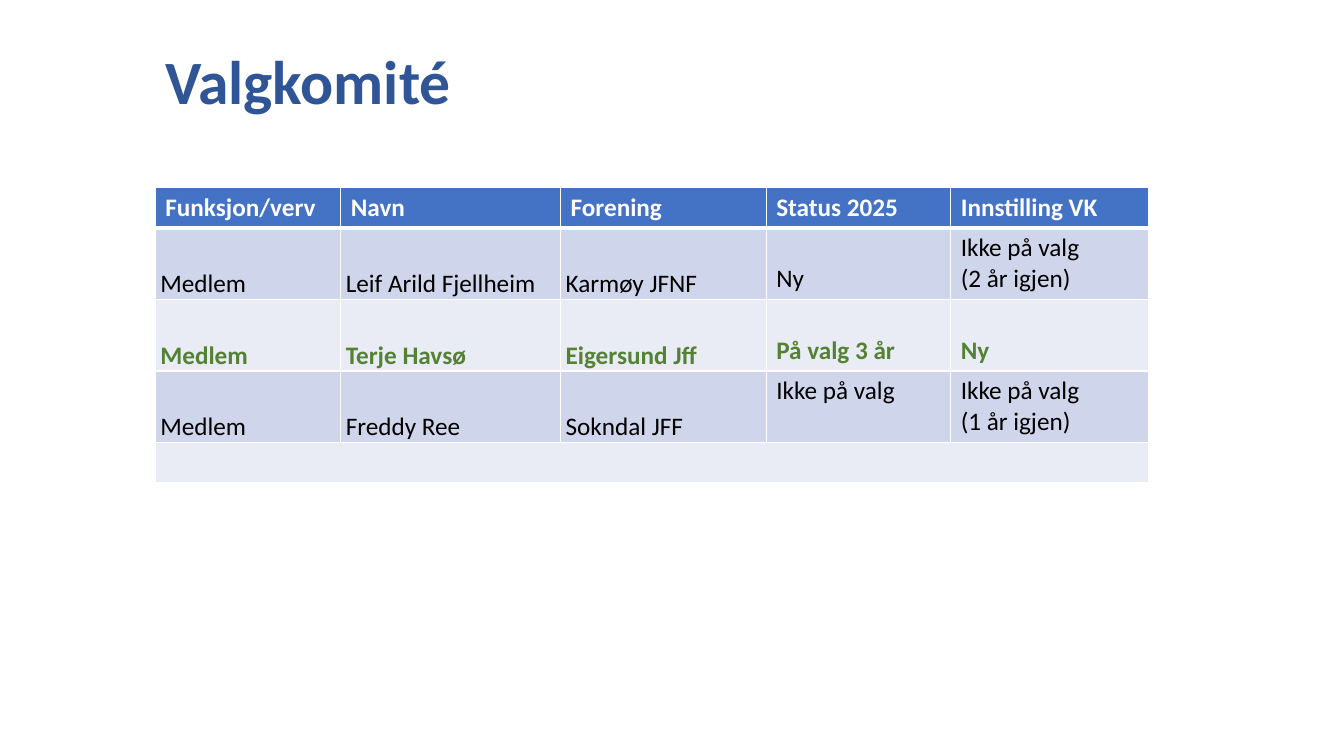
from lxml.etree import SubElement
from pptx import Presentation
from pptx.dml.color import RGBColor
from pptx.enum.text import MSO_ANCHOR
from pptx.oxml.ns import qn
from pptx.util import Inches, Pt

COLORS = {
    "title": "2F5597",
    "header": "4472C4",
    "odd": "CFD5EA",
    "even": "E9EBF5",
    "white": "FFFFFF",
    "black": "000000",
    "green": "548235",
}
COLUMN_WIDTHS = [1.84, 2.18, 2.04, 1.83, 1.96]
ROW_HEIGHTS = [0.4, 0.71, 0.71, 0.71, 0.4]
HEADINGS = ["Funksjon/verv", "Navn", "Forening", "Status 2025", "Innstilling VK"]
MEMBERS = [
    ["Medlem", "Leif Arild Fjellheim", "Karmøy JFNF", "Ny", "Ikke på valg\n(2 år igjen)"],
    ["Medlem", "Terje Havsø", "Eigersund Jff", "På valg 3 år", "Ny"],
    ["Medlem", "Freddy Ree", "Sokndal JFF", "Ikke på valg", "Ikke på valg\n(1 år igjen)"],
]
UP_FOR_ELECTION = 2
HEADER_TEXT = {"size": Pt(18), "bold": True, "color": "white"}
BODY_TEXT = {"size": Pt(18), "bold": False, "color": "black"}
ELECTION_TEXT = {"size": Pt(18), "bold": True, "color": "green"}
TITLE_TEXT = {"size": Pt(44), "bold": True, "color": "title"}
PERSON_CELL = {
    "vertical_anchor": MSO_ANCHOR.BOTTOM,
    "margin_left": Inches(0.05),
    "margin_right": Inches(0.05),
    "margin_top": 0,
    "margin_bottom": 0,
}
PERSON_PARAGRAPH = {"line_spacing": 1.05, "space_after": Pt(8)}


def set_attributes(target, values):
    for name, value in values.items():
        setattr(target, name, value)


def write_text(frame, text, style, paragraph_format):
    for index, line in enumerate(text.split("\n")):
        para = frame.add_paragraph() if index else frame.paragraphs[0]
        set_attributes(para, paragraph_format)
        span = para.add_run()
        span.text = line
        font_format = {"name": "Calibri", "size": style["size"], "bold": style["bold"]}
        set_attributes(span.font, font_format)
        span.font.color.rgb = RGBColor.from_string(COLORS[style["color"]])


def add_title(page, text):
    box = page.shapes.add_textbox(Inches(1.54), Inches(0.11), Inches(9.85), Inches(1.45))
    set_attributes(box.text_frame, {"word_wrap": True, "vertical_anchor": MSO_ANCHOR.MIDDLE})
    write_text(box.text_frame, text, TITLE_TEXT, {"line_spacing": 0.9})


def style_cell(cell, fill, row):
    properties = cell._tc.get_or_add_tcPr()
    widths = {"lnL": 1, "lnR": 1, "lnT": 3 if row == 1 else 1, "lnB": 3 if row == 0 else 1}
    for side, width in widths.items():
        line = SubElement(properties, qn(f"a:{side}"), w=str(Pt(width)))
        paint = SubElement(line, qn("a:solidFill"))
        SubElement(paint, qn("a:srgbClr"), val=COLORS["white"])
    cell.fill.solid()
    cell.fill.fore_color.rgb = RGBColor.from_string(COLORS[fill])


def fill_member_row(table, row, values):
    style = ELECTION_TEXT if row == UP_FOR_ELECTION else BODY_TEXT
    for column, text in enumerate(values):
        cell = table.cell(row, column)
        is_person = column < 3
        if is_person:
            set_attributes(cell, PERSON_CELL)
        elif text in ("Ny", "På valg 3 år"):
            cell.vertical_anchor = MSO_ANCHOR.BOTTOM
        write_text(cell.text_frame, text, style, PERSON_PARAGRAPH if is_person else {})


def add_committee_table(page):
    frame = page.shapes.add_table(
        len(ROW_HEIGHTS), len(COLUMN_WIDTHS),
        Inches(1.54), Inches(1.86), Inches(sum(COLUMN_WIDTHS)), Inches(sum(ROW_HEIGHTS)),
    )
    table = frame.table
    for column, width in zip(table.columns, COLUMN_WIDTHS):
        column.width = Inches(width)
    for index, height in enumerate(ROW_HEIGHTS):
        table.rows[index].height = Inches(height)
        fill = "header" if index == 0 else "odd" if index % 2 else "even"
        for cell in table.rows[index].cells:
            style_cell(cell, fill, index)
    for column, heading in enumerate(HEADINGS):
        write_text(table.cell(0, column).text_frame, heading, HEADER_TEXT, {})
    for row, values in enumerate(MEMBERS, start=1):
        fill_member_row(table, row, values)
    last = len(ROW_HEIGHTS) - 1
    table.cell(last, 0).merge(table.cell(last, len(COLUMN_WIDTHS) - 1))


def main():
    deck = Presentation()
    set_attributes(deck, {"slide_width": Inches(13.33), "slide_height": Inches(7.5)})
    page = deck.slides.add_slide(deck.slide_layouts[6])
    add_title(page, "Valgkomité")
    add_committee_table(page)
    deck.save("out.pptx")


if __name__ == "__main__":
    main()
